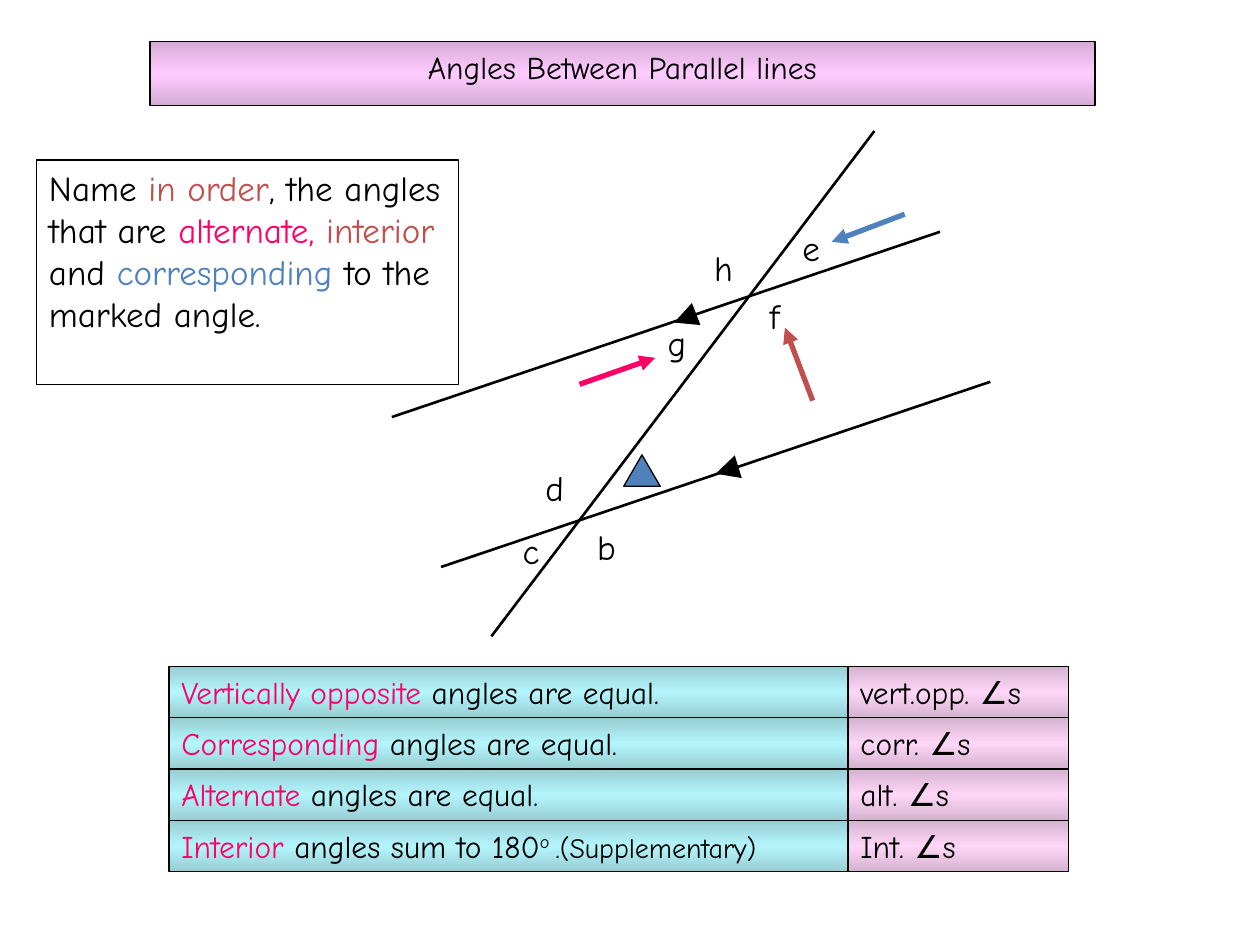
import copy
import pptx
import pptx.util
import pptx.dml.color
import pptx.enum.shapes
import pptx.enum.text
import pptx.oxml.ns
import pptx.oxml.xmlchemy

COLORS = {
    "ink": "000000", "pink": "FF0066", "red": "C0504D", "blue": "4F81BD",
    "title edge": "D5ABD5", "title middle": "FFCCFF",
    "rule edge": "97CDD3", "rule middle": "B4F5FC",
    "reason edge": "D4B3CF", "reason middle": "FED6F7",
}
RGB = {name: pptx.dml.color.RGBColor.from_string(value) for name, value in COLORS.items()}
FONT = "Comic Neue"
SHAPES = pptx.enum.shapes.MSO_SHAPE
ALIGN = pptx.enum.text.PP_ALIGN

deck = pptx.Presentation()
deck.slide_width = pptx.util.Inches(10)
deck.slide_height = pptx.util.Inches(7.5)
slide = deck.slides.add_slide(deck.slide_layouts[6])
COL = deck.slide_width / 100
ROW = deck.slide_height / 75


def add_panel(kind, left, top, width, height, runs=(), size=18, fill=None, align=ALIGN.LEFT):
    place = [int(left * COL), int(top * ROW), int(width * COL), int(height * ROW)]
    if kind is None:
        panel = slide.shapes.add_textbox(*place)
    else:
        panel = slide.shapes.add_shape(kind, *place)
        panel.shadow.inherit = False
        panel.line.color.rgb = RGB["ink"]
        panel.line.width = pptx.util.Pt(0.75)
        if fill is None:
            panel.fill.background()
        elif fill in RGB:
            panel.fill.solid()
            panel.fill.fore_color.rgb = RGB[fill]
        else:
            panel.fill.gradient()
            panel.fill.gradient_angle = 270
            for stop in panel.fill.gradient_stops:
                stop.color.rgb = RGB[fill + " edge"]
            stops = panel._element.spPr.find(".//" + pptx.oxml.ns.qn("a:gsLst"))
            stops.insert(1, copy.deepcopy(stops[0]))
            middle = panel.fill.gradient_stops[1]
            middle.position = 0.5
            middle.color.rgb = RGB[fill + " middle"]
    if runs:
        frame = panel.text_frame
        frame.word_wrap = True
        frame.auto_size = pptx.enum.text.MSO_AUTO_SIZE.SHAPE_TO_FIT_TEXT
        frame.vertical_anchor = pptx.enum.text.MSO_ANCHOR.TOP
        paragraph = frame.paragraphs[0]
        paragraph.alignment = align
        for words, color in runs:
            run = paragraph.add_run()
            run.text = words
            run.font.name = FONT
            run.font.size = pptx.util.Pt(size)
            run.font.color.rgb = RGB[color]
    return panel


def add_line(parent, start, end, color, weight, arrow=False):
    line = parent.shapes.add_connector(
        pptx.enum.shapes.MSO_CONNECTOR.STRAIGHT,
        int(start[0] * COL), int(start[1] * ROW), int(end[0] * COL), int(end[1] * ROW))
    line.line.color.rgb = RGB[color]
    line.line.width = pptx.util.Pt(weight)
    if arrow:
        outline = line.line._get_or_add_ln()
        outline.append(pptx.oxml.xmlchemy.OxmlElement("a:tailEnd"))
        outline[-1].set("type", "triangle")
    line._element.spPr.append(pptx.oxml.xmlchemy.OxmlElement("a:effectLst"))


add_panel(SHAPES.RECTANGLE, 11.9, 3.3, 75, 5.1, [("Angles Between Parallel lines", "ink")],
          fill="title", align=ALIGN.CENTER)

diagram = slide.shapes.add_group_shape()
for start, end, weight, arrow in [
    ((78.6, 30.3), (35, 45), 1.5, False),
    ((74.6, 18.4), (31.1, 33.1), 1.5, False),
    ((58.1, 37.2), (56.8, 37.6), 4.5, True),
    ((54.8, 25.1), (53.5, 25.6), 4.5, True),
    ((69.4, 10.4), (39, 50.5), 1.5, False),
]:
    add_line(diagram, start, end, "ink", weight, arrow)

add_panel(SHAPES.ISOSCELES_TRIANGLE, 49.5, 36.1, 2.9, 2.5, fill="blue")

for angle, left, top in [
    ("h", 55.7, 19.1), ("f", 60.1, 22.9), ("e", 62.7, 17.5), ("b", 46.4, 41.2),
    ("g", 52, 25), ("d", 42.3, 36.5), ("c", 40.5, 41.5),
]:
    add_panel(None, left, top, 4.3, 4.3, [(angle, "ink")], size=20)

add_panel(SHAPES.RECTANGLE, 2.9, 12.7, 33.5, 17.8, [
    ("Name ", "ink"), ("in order", "red"), (", the angles that are ", "ink"),
    ("alternate, ", "pink"), ("interior", "red"), (" and ", "ink"),
    ("corresponding", "blue"), (" to the marked angle.", "ink"),
], size=20)

RULES = [
    ([("Vertically opposite", "pink"), (" angles are equal.", "ink")], "vert.opp. ∠s"),
    ([("Corresponding", "pink"), (" angles are equal.", "ink")], "corr. ∠s"),
    ([("Alternate ", "pink"), ("angles are equal.", "ink")], "alt. ∠s"),
    ([("Interior ", "pink"), ("angles sum to 180", "ink"), ("o ", "ink"),
      (".(Supplementary)", "ink")], "Int. ∠s"),
]
for index, (rule, reason) in enumerate(RULES):
    top = 52.9 + index * 4.07
    rule_panel = add_panel(SHAPES.RECTANGLE, 13.4, top, 53.9, 4.07, rule, fill="rule")
    add_panel(SHAPES.RECTANGLE, 67.3, top, 17.5, 4.07, [(reason, "ink")], fill="reason")

degree, note = rule_panel.text_frame.paragraphs[0].runs[2:]
degree.font._element.set("baseline", "30000")
note.font.size = pptx.util.Pt(16)

for start, end, color in [
    ((46, 30.5), (52, 28.4), "pink"),
    ((64.5, 31.8), (62.3, 26), "red"),
    ((71.8, 17), (66, 19.2), "blue"),
]:
    add_line(slide, start, end, color, 3, arrow=True)

deck.save("out.pptx")
